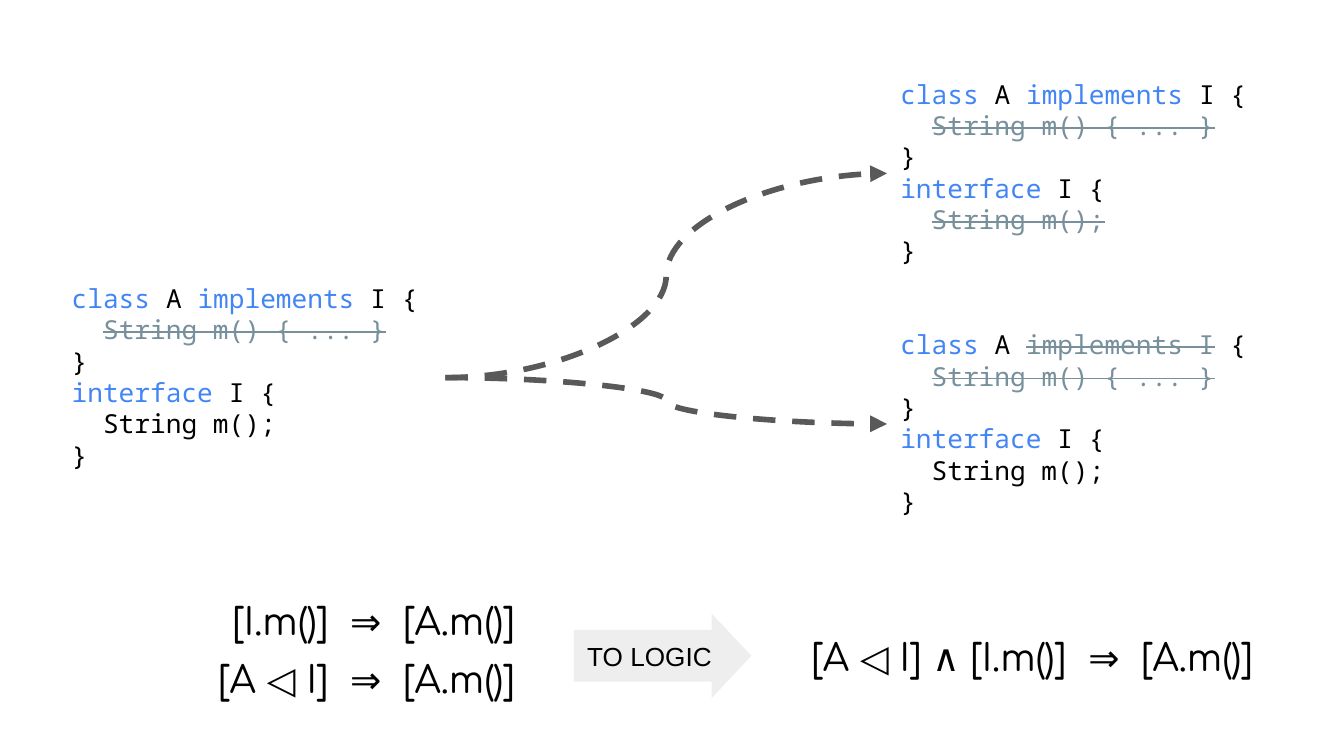
from lxml import etree
from pptx import Presentation
from pptx.dml.color import RGBColor
from pptx.enum.dml import MSO_LINE
from pptx.enum.shapes import MSO_CONNECTOR, MSO_SHAPE
from pptx.enum.text import MSO_ANCHOR, PP_ALIGN
from pptx.oxml.ns import qn
from pptx.util import Pt

PX = 4572  # EMU per px, 200 px to the inch
CURVE = MSO_CONNECTOR.CURVE
RIGHT_ARROW = MSO_SHAPE.RIGHT_ARROW
DASH = MSO_LINE.DASH
MIDDLE = MSO_ANCHOR.MIDDLE
LEFT, RIGHT, JUSTIFY = PP_ALIGN.LEFT, PP_ALIGN.RIGHT, PP_ALIGN.JUSTIFY

BLACK = RGBColor(0x00, 0x00, 0x00)
BLUE = RGBColor(0x42, 0x85, 0xF4)
SLATE = RGBColor(0x78, 0x90, 0x9C)
GRAY = RGBColor(0x59, 0x59, 0x59)
PALE = RGBColor(0xEE, 0xEE, 0xEE)

CODE_FONT, LOGIC_FONT, LABEL_FONT = "Noto Sans Mono", "Comfortaa", "Arial"
CODE_W, CODE_H = 576, 324
FORMULA_H = 104
RIGHT_SIDE, LEFT_SIDE = 3, 1  # connection sites

# Code lines: lists of (text, colour); slate text is struck through
CLASS_LINE = [("class", BLUE), (" A ", BLACK), ("implements", BLUE), (" I {", BLACK)]
CLASS_CUT = [("class", BLUE), (" A ", BLACK), ("implements I", SLATE), (" {", BLACK)]
BODY_CUT = [("  ", BLACK), ("String m() { ... }", SLATE)]
INTERFACE_LINE = [("interface", BLUE), (" I { ", BLACK)]
METHOD_LINE = [("  String m();", BLACK)]
METHOD_CUT = [("  ", BLACK), ("String m();", SLATE)]
CLOSE = [("}", BLACK)]


def px(*values):
    return [v * PX for v in values]


def format_run(r, font, size, color):
    r.font.name = font
    r.font.size = Pt(size)
    r.font.color.rgb = color


def set_margins(tf):
    tf.word_wrap = True
    tf.margin_left = tf.margin_right = tf.margin_top = tf.margin_bottom = 20 * PX


def add_code(slide, x, y, class_line, method_line):
    box = slide.shapes.add_textbox(*px(x, y, CODE_W, CODE_H))
    tf = box.text_frame
    set_margins(tf)
    lines = [class_line, BODY_CUT, CLOSE, INTERFACE_LINE, method_line, CLOSE]
    for i, line in enumerate(lines):
        p = tf.add_paragraph() if i else tf.paragraphs[0]
        p.alignment = JUSTIFY
        for text, color in line:
            r = p.add_run()
            r.text = text
            format_run(r, CODE_FONT, 14, color)
            if color == SLATE:
                r.font._element.set("strike", "sngStrike")
    return box


def write_line(sp, text, font, size, align):
    tf = sp.text_frame
    set_margins(tf)
    tf.text = text
    p = tf.paragraphs[0]
    p.alignment = align
    format_run(p.runs[0], font, size, BLACK)


def add_formula(slide, x, y, w, text, align):
    box = slide.shapes.add_textbox(*px(x, y, w, FORMULA_H))
    write_line(box, text, LOGIC_FONT, 20, align)


def add_block_arrow(slide, x, y, w, h, text):
    sp = slide.shapes.add_shape(RIGHT_ARROW, *px(x, y, w, h))
    sp.adjustments[0], sp.adjustments[1] = 0.61, 0.47
    sp.shadow.inherit = False
    sp.fill.solid()
    sp.fill.fore_color.rgb = PALE
    sp.line.fill.background()
    sp.text_frame.vertical_anchor = MIDDLE
    write_line(sp, text, LABEL_FONT, 14, LEFT)


def add_dashed_curve(slide, source, target):
    cx = slide.shapes.add_connector(CURVE, 0, 0, 0, 0)
    cx.begin_connect(source, RIGHT_SIDE)
    cx.end_connect(target, LEFT_SIDE)
    cx.line.color.rgb = GRAY
    cx.line.width = Pt(3)
    cx.line.dash_style = DASH
    etree.SubElement(cx.line._get_or_add_ln(), qn("a:tailEnd"), type="triangle")
    etree.SubElement(cx._element.spPr, qn("a:effectLst"))


def main():
    prs = Presentation()
    prs.slide_width, prs.slide_height = px(2000, 1125)
    slide = prs.slides.add_slide(prs.slide_layouts[6])

    # Code before and after the two reductions
    start = add_code(slide, 87, 400, CLASS_LINE, METHOD_LINE)
    upper = add_code(slide, 1320, 96, CLASS_LINE, METHOD_CUT)
    lower = add_code(slide, 1320, 469, CLASS_CUT, METHOD_LINE)
    for target in (upper, lower):
        add_dashed_curve(slide, start, target)

    # Translation to logic
    add_formula(slide, 262, 870, 524, "[I.m()]  ⇒  [A.m()]", RIGHT)
    add_formula(slide, 190, 957, 596, "[A ◁ I]  ⇒  [A.m()]", RIGHT)
    add_block_arrow(slide, 854, 913, 264, 126, "TO LOGIC")
    add_formula(slide, 1188, 924, 708, "[A ◁ I] ∧ [I.m()]  ⇒  [A.m()]", LEFT)

    prs.save("out.pptx")


if __name__ == "__main__":
    main()
